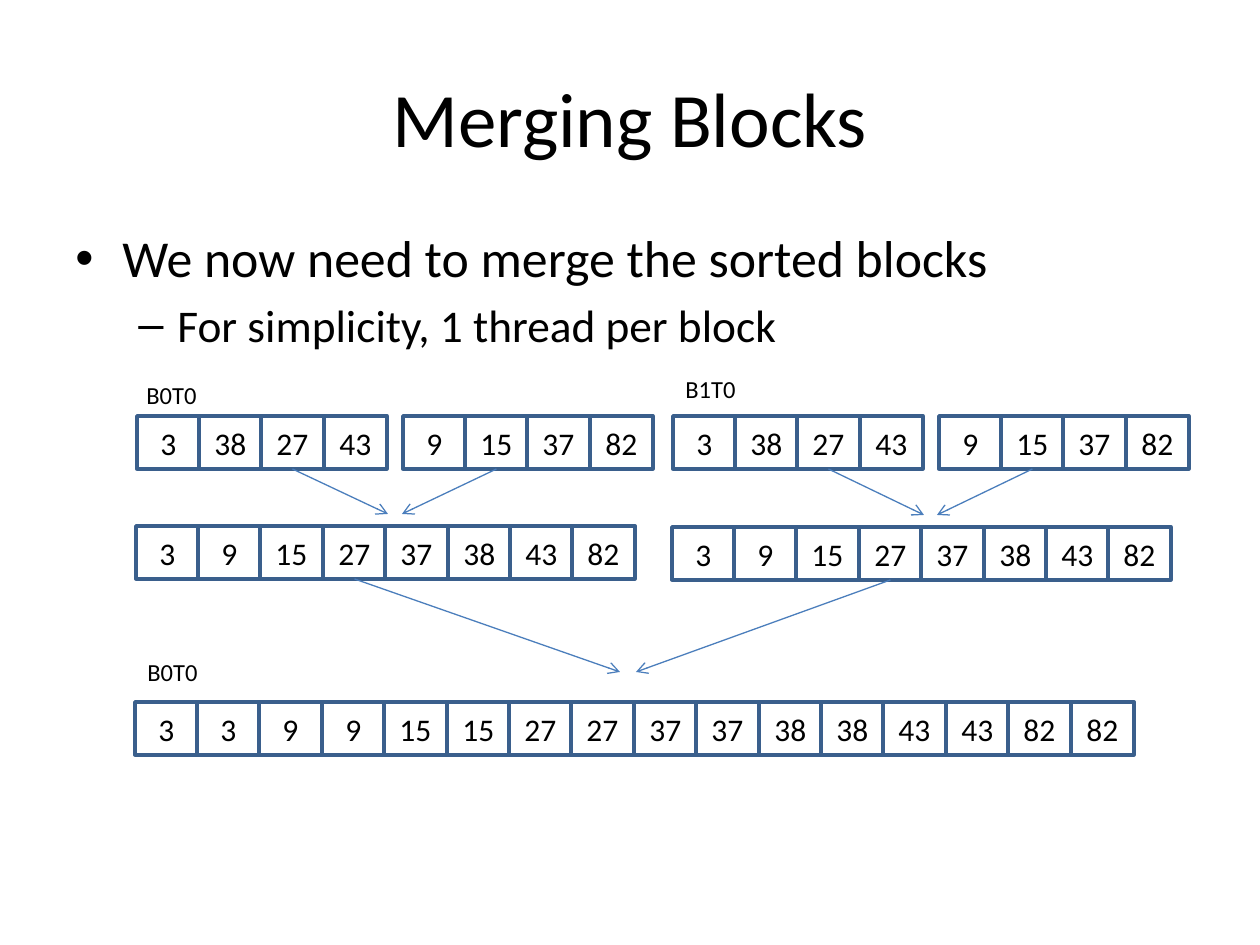
import pptx
import pptx.dml.color
import pptx.enum.shapes
import pptx.enum.text
import pptx.oxml.ns
import pptx.util
from dataclasses import dataclass
from lxml import etree

PX = 914400 // 126  # EMU per px


@dataclass(frozen=True)
class Theme:
    font: str = "Calibri"
    ink: str = "000000"
    cell_fill: str = "FFFFFF"
    cell_line: str = "3A5F8C"
    arrow: str = "4B7EBC"
    title: float = 44
    bullet: float = 29.6
    sub_bullet: float = 25.9
    value: float = 18
    label: float = 14


theme = Theme()
rgb = pptx.dml.color.RGBColor.from_string
qn = pptx.oxml.ns.qn
Align = pptx.enum.text.PP_ALIGN
Anchor = pptx.enum.text.MSO_ANCHOR


def write(paragraph, text, size, align=Align.LEFT):
    paragraph.text = text
    paragraph.alignment = align
    paragraph.font.name = theme.font
    paragraph.font.size = pptx.util.Pt(size)
    paragraph.font.color.rgb = rgb(theme.ink)


def add_text_box(left, top, width, height, wrap=True):
    box = slide.shapes.add_textbox(left * PX, top * PX, width * PX, height * PX)
    box.text_frame.word_wrap = wrap
    return box.text_frame


deck = pptx.Presentation()
deck.slide_width = pptx.util.Inches(10)
deck.slide_height = pptx.util.Inches(7.5)
slide = deck.slides.add_slide(deck.slide_layouts[6])

title = add_text_box(63, 38, 1134, 157)
title.vertical_anchor = Anchor.MIDDLE
write(title.paragraphs[0], "Merging Blocks", theme.title, Align.CENTER)

# Text, size, level, bullet, left margin px, hanging indent px, space before pt
points = [
    ("We now need to merge the sorted blocks", theme.bullet, 0, "•", 47, 47, 2),
    ("For simplicity, 1 thread per block", theme.sub_bullet, 1, "–", 102, 39, 5),
]
body = add_text_box(63, 220, 1134, 136)
for i, (text, size, level, bullet, margin, hang, before) in enumerate(points):
    paragraph = body.paragraphs[0] if i == 0 else body.add_paragraph()
    write(paragraph, text, size)
    paragraph.level = level
    paragraph.space_before = pptx.util.Pt(before)
    properties = paragraph._p.get_or_add_pPr()
    properties.set("marL", str(margin * PX))
    properties.set("indent", str(-hang * PX))
    bullet_font = etree.Element(qn("a:buFont"), typeface="Arial")
    bullet_char = etree.Element(qn("a:buChar"), char=bullet)
    properties.find(qn("a:spcBef")).addnext(bullet_font)
    bullet_font.addnext(bullet_char)

for text, left, top in [("B0T0", 134, 374), ("B1T0", 673, 368), ("B0T0", 135, 651)]:
    label = add_text_box(left, top, 77, 43, wrap=False)
    write(label.paragraphs[0], text, theme.label)

CELL_WIDTH, CELL_HEIGHT = 63, 53
low, high = [3, 38, 27, 43], [9, 15, 37, 82]
merged = sorted(low + high)
# Block: left, top, values
blocks = {
    "left low": (137, 416, low),
    "left high": (403, 416, high),
    "right low": (673, 416, low),
    "right high": (939, 416, high),
    "left merged": (136, 526, merged),
    "right merged": (672, 527, merged),
    "all merged": (135, 702, sorted(merged * 2)),
}
cells = {}
for block, (left, top, values) in blocks.items():
    for i, value in enumerate(values):
        cell = slide.shapes.add_shape(
            pptx.enum.shapes.MSO_SHAPE.RECTANGLE,
            (left + i * 312 // 5) * PX, top * PX, CELL_WIDTH * PX, CELL_HEIGHT * PX)
        cell.shadow.inherit = False
        cell.fill.solid()
        cell.fill.fore_color.rgb = rgb(theme.cell_fill)
        cell.line.color.rgb = rgb(theme.cell_line)
        cell.line.width = pptx.util.Pt(2)
        cell.text_frame.vertical_anchor = Anchor.MIDDLE
        write(cell.text_frame.paragraphs[0], str(value), theme.value, Align.CENTER)
        cells[block, i] = cell

# Source block, cell index, arrow tip x and y
merges = [
    ("left low", 2, 388, 514),
    ("left high", 1, 402, 514),
    ("right low", 2, 924, 515),
    ("right high", 1, 937, 515),
    ("left merged", 3, 620, 672),
    ("right merged", 3, 636, 672),
]
for block, i, tip_x, tip_y in merges:
    arrow = slide.shapes.add_connector(
        pptx.enum.shapes.MSO_CONNECTOR.STRAIGHT, 0, 0, tip_x * PX, tip_y * PX)
    arrow.begin_connect(cells[block, i], 2)
    arrow.line.color.rgb = rgb(theme.arrow)
    arrow.line.width = pptx.util.Pt(0.75)
    etree.SubElement(arrow.line._get_or_add_ln(), qn("a:tailEnd"), type="arrow")
    etree.SubElement(arrow._element.spPr, qn("a:effectLst"))

deck.save("out.pptx")
